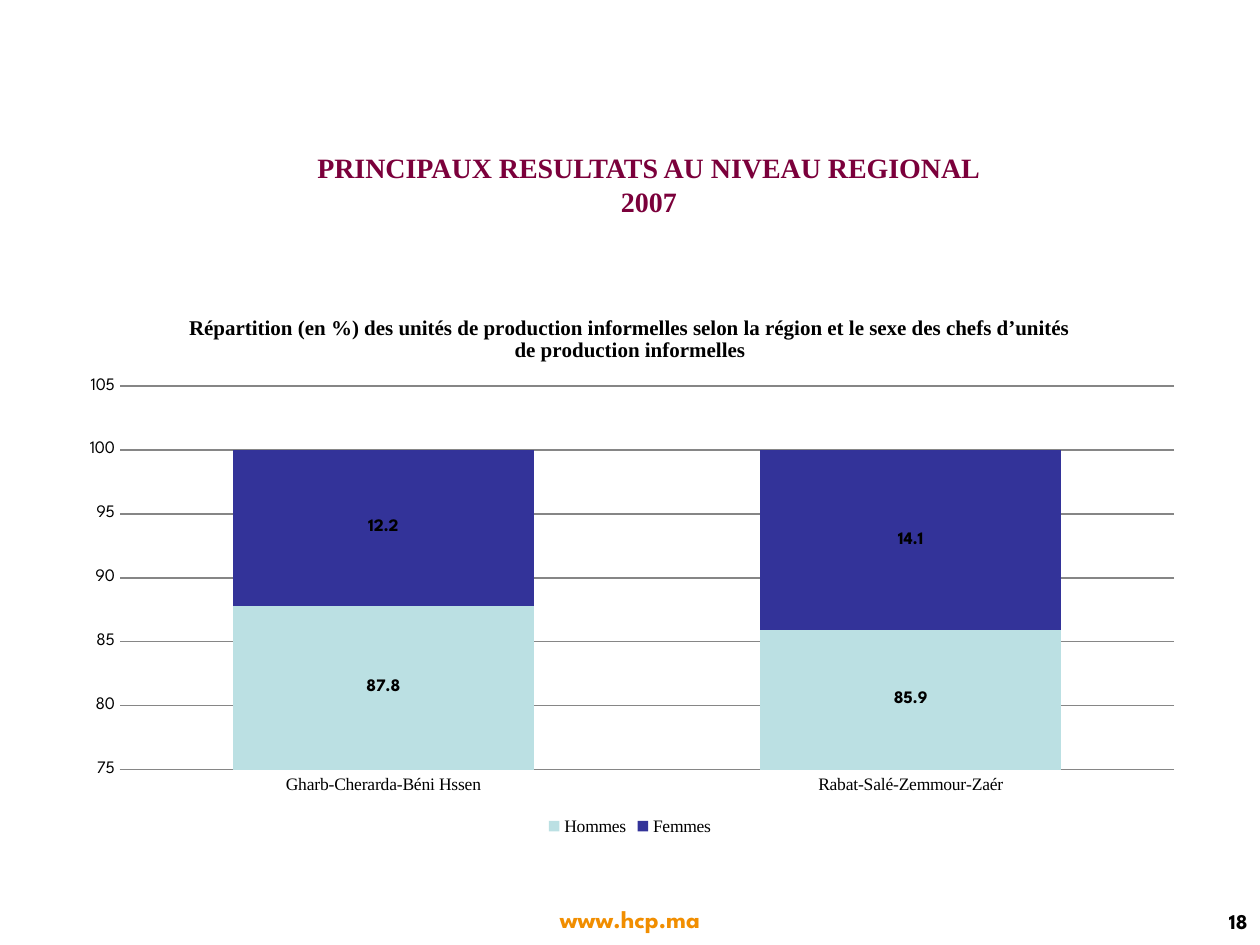
from lxml import etree
from pptx import Presentation
from pptx import util as u
from pptx.chart.data import CategoryChartData
from pptx.dml.color import RGBColor
from pptx.enum import chart as ch, text
from pptx.oxml import parse_xml
from pptx.oxml.ns import nsdecls, qn

SANS, SERIF = "League Spartan", "Times New Roman"
BLACK, PLUM, ORANGE, GREY = "000000", "7B003B", "F18E00", "868686"
SEX_COLOURS = {"Hommes": "BBE0E3", "Femmes": "333399"}


def colour(hex_code):
    return RGBColor.from_string(hex_code)


class SlideBuilder:
    """Draws on one slide; boxes are (left, top, width, height) as shares of it."""

    def __init__(self, width=10, height=7.5):
        self.prs = Presentation()
        self.prs.slide_width, self.prs.slide_height = u.Inches(width), u.Inches(height)
        self.slide = self.prs.slides.add_slide(self.prs.slide_layouts[6])

    def place(self, box):
        sides = (self.prs.slide_width, self.prs.slide_height) * 2
        return [round(share * side) for share, side in zip(box, sides)]

    def style(self, font, size, face=SANS, hex_code=BLACK, bold=False):
        font.size, font.name, font.bold = u.Pt(size), face, bold
        font.color.rgb = colour(hex_code)

    def text(self, box, words, align, anchor=text.MSO_ANCHOR.MIDDLE, **style):
        frame = self.slide.shapes.add_textbox(*self.place(box)).text_frame
        frame.word_wrap = True
        frame.vertical_anchor = anchor
        paragraph = frame.paragraphs[0]
        paragraph.text = words
        paragraph.alignment = align
        self.style(paragraph.font, bold=True, **style)

    def stacked_columns(self, box, title, regions, shares, plot):
        """Stacked columns; plot is the inner plot area as shares of the chart."""
        data = CategoryChartData(number_format="0.0")
        data.categories = regions
        for sex, values in shares.items():
            data.add_series(sex, values)
        chart = self.slide.shapes.add_chart(
            ch.XL_CHART_TYPE.COLUMN_STACKED, *self.place(box), data).chart
        self.style(chart.font, 10)

        heading = chart.chart_title.text_frame.paragraphs[0]
        heading.text = title
        self.style(heading.font, 12, SERIF, bold=True)
        chart.chart_title.include_in_layout = False

        chart.has_legend = True
        chart.legend.position = ch.XL_LEGEND_POSITION.BOTTOM
        chart.legend.include_in_layout = False
        self.style(chart.legend.font, 10, SERIF)

        self.axes(chart)
        columns = chart.plots[0]
        columns.gap_width, columns.overlap = 75, 100
        columns.vary_by_categories = False
        for series in columns.series:
            series.format.fill.solid()
            series.format.fill.fore_color.rgb = colour(SEX_COLOURS[series.name])
            labels = series.data_labels
            labels.show_value = True
            labels.position = ch.XL_LABEL_POSITION.CENTER
            self.style(labels.font, 10, bold=True)
        self.fix_plot_area(chart, plot)

    def axes(self, chart):
        regions, percent = chart.category_axis, chart.value_axis
        for axis, face in ((regions, SERIF), (percent, SANS)):
            axis.major_tick_mark = axis.minor_tick_mark = ch.XL_TICK_MARK.NONE
            self.style(axis.tick_labels.font, 10, face)
        percent.minimum_scale, percent.maximum_scale, percent.major_unit = 75, 105, 5
        percent.tick_labels.number_format = "0"
        percent.tick_labels.number_format_is_linked = False
        percent.format.line.fill.background()
        percent.has_major_gridlines = True
        for line in (regions.format.line, percent.major_gridlines.format.line):
            line.color.rgb = colour(GREY)
            line.width = u.Pt(0.75)

    def fix_plot_area(self, chart, plot):
        area = chart.plots[0]._element.getparent()
        for old in area.findall(qn("c:layout")):
            area.remove(old)
        layout = parse_xml(f"<c:layout {nsdecls('c')}><c:manualLayout/></c:layout>")
        settings = [("layoutTarget", "inner"), ("xMode", "edge"), ("yMode", "edge")]
        for tag, value in settings + list(zip("xywh", plot)):
            etree.SubElement(layout[0], qn(f"c:{tag}")).set("val", str(value))
        area.insert(0, layout)


def main():
    page = SlideBuilder()
    centre, right = text.PP_ALIGN.CENTER, text.PP_ALIGN.RIGHT
    page.text((0.38, 0.95, 0.24, 0.04), "www.hcp.ma", centre,
              anchor=text.MSO_ANCHOR.TOP, size=14, hex_code=ORANGE)
    page.text((0.85, 0.95, 0.15, 0.05), "18", right, size=12)
    page.text((0.13, 0.11, 0.77, 0.17),
              "PRINCIPAUX RESULTATS AU NIVEAU REGIONAL\v2007", centre,
              size=16, face=SERIF, hex_code=PLUM)
    page.stacked_columns(
        (0.05, 0.31, 0.9, 0.58),
        "Répartition (en %) des unités de production informelles selon la région "
        "et le sexe des chefs d’unités de production informelles",
        ["Gharb-Cherarda-Béni Hssen", "Rabat-Salé-Zemmour-Zaér"],
        {"Hommes": (87.8, 85.9), "Femmes": (12.2, 14.1)},
        plot=(0.05, 0.17, 0.93, 0.7))
    page.prs.save("out.pptx")


if __name__ == "__main__":
    main()
